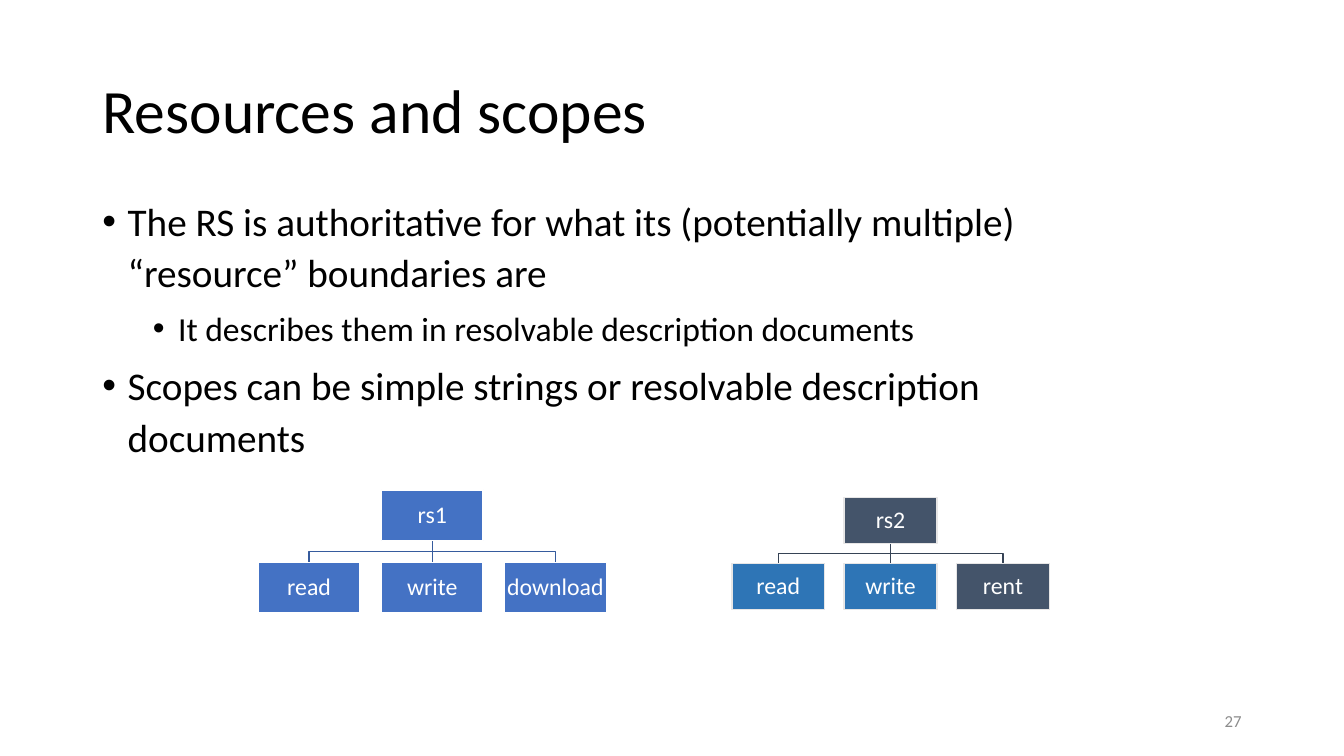
import pptx
import pptx.dml.color
import pptx.enum.shapes
import pptx.enum.text
import pptx.oxml.ns
import pptx.util
from lxml import etree

Pt = pptx.util.Pt
RGBColor = pptx.dml.color.RGBColor
ALIGN = pptx.enum.text.PP_ALIGN
MIDDLE = pptx.enum.text.MSO_ANCHOR.MIDDLE
TOP = pptx.enum.text.MSO_ANCHOR.TOP
SHAPES = pptx.enum.shapes

FONT = "Calibri"
BLACK = RGBColor(0x00, 0x00, 0x00)
WHITE = RGBColor(0xFF, 0xFF, 0xFF)
GRAY = RGBColor(0x8C, 0x8C, 0x8C)
PALE = RGBColor(0xE7, 0xE6, 0xE6)
BLUE = RGBColor(0x44, 0x72, 0xC4)
BLUE_LINE = RGBColor(0x36, 0x5B, 0x9D)
TEAL = RGBColor(0x2E, 0x75, 0xB6)
SLATE = RGBColor(0x44, 0x54, 0x6A)
SLATE_LINE = RGBColor(0x36, 0x43, 0x55)

BULLETS = [
    (0, "The RS is authoritative for what its (potentially multiple) “resource” boundaries are"),
    (1, "It describes them in resolvable description documents"),
    (0, "Scopes can be simple strings or resolvable description documents"),
]


def write_text(para, text, size, color=BLACK, align=ALIGN.LEFT, spacing=1.0, before=0):
    """Write one formatted run into a paragraph."""
    para.alignment = align
    para.line_spacing = spacing
    para.space_before = Pt(before)
    span = para.add_run()
    span.text = text
    span.font.name = FONT
    span.font.size = Pt(size)
    span.font.color.rgb = color


def add_bullet(para, indent):
    """Give a paragraph a hanging round bullet."""
    properties = para._p.get_or_add_pPr()
    properties.set("marL", str(Pt(indent)))
    properties.set("indent", str(Pt(-18)))
    for tag, name, value in (("a:buFont", "typeface", "Arial"), ("a:buChar", "char", "•")):
        etree.SubElement(properties, pptx.oxml.ns.qn(tag)).set(name, value)


def prepare_frame(shape, anchor, margin=None):
    """Set wrapping, anchor and margins of a shape's text and return its frame."""
    frame = shape.text_frame
    frame.word_wrap = True
    frame.auto_size = pptx.enum.text.MSO_AUTO_SIZE.NONE
    frame.vertical_anchor = anchor
    if margin is not None:
        frame.margin_left = frame.margin_right = Pt(margin)
        frame.margin_top = frame.margin_bottom = Pt(margin)
    return frame


def place(shape, box):
    """Move a shape to a box of left, top, width and height in points."""
    shape.left, shape.top, shape.width, shape.height = (Pt(length) for length in box)


def fill_title(page, box):
    """Fill the title placeholder."""
    place(page.shapes.title, box)
    frame = prepare_frame(page.shapes.title, MIDDLE)
    write_text(frame.paragraphs[0], "Resources and scopes", 44, spacing=0.9)


def fill_body(page, box):
    """Fill the body placeholder with the bullet list."""
    body = page.placeholders[1]
    place(body, box)
    frame = prepare_frame(body, TOP)
    for index, (level, text) in enumerate(BULLETS):
        para = frame.add_paragraph() if index else frame.paragraphs[0]
        para.level = level
        add_bullet(para, 18 + 36 * level)
        write_text(para, text, 28 - 4 * level, spacing=1.1, before=6 if index else 0)


def add_page_number(page, box):
    """Add the page number at the right of its box."""
    frame = prepare_frame(page.shapes.add_textbox(*map(Pt, box)), MIDDLE)
    write_text(frame.paragraphs[0], "27", 12, color=GRAY, align=ALIGN.RIGHT)


def add_node(page, box, text, fill, border):
    """Add one labelled box of a tree."""
    node = page.shapes.add_shape(SHAPES.MSO_SHAPE.RECTANGLE, *map(Pt, box))
    node.shadow.inherit = False
    node.fill.solid()
    node.fill.fore_color.rgb = fill
    node.line.color.rgb = border
    node.line.width = Pt(1)
    frame = prepare_frame(node, MIDDLE, margin=0.75)
    write_text(frame.paragraphs[0], text, 17, color=WHITE, align=ALIGN.CENTER, spacing=0.9)


def add_branch(page, start, end, color):
    """Join a parent's bottom to a child's top, with an elbow when they are not aligned."""
    (x1, y1), (x2, y2) = start, end
    if x1 == x2:
        branch = page.shapes.add_connector(
            SHAPES.MSO_CONNECTOR.STRAIGHT, *map(Pt, start + end))
        etree.SubElement(branch._element.spPr, pptx.oxml.ns.qn("a:effectLst"))
    else:
        middle = (y1 + y2) / 2
        builder = page.shapes.build_freeform(Pt(x1), Pt(y1))
        corners = [(x1, middle), (x2, middle), end]
        builder.add_line_segments([(Pt(x), Pt(y)) for x, y in corners], close=False)
        branch = builder.convert_to_shape()
        branch.shadow.inherit = False
        branch.fill.background()
    branch.line.color.rgb = color
    branch.line.width = Pt(1)


def add_tree(page, box, root, leaves, border, line):
    """Draw a root above its three scopes across the given left, top and width."""
    left, top, width = box
    node_width = width / 3.42
    node_height = node_width / 2
    step = 1.21 * node_width
    leaf_top = top + 0.71 * node_width
    lefts = [left + index * step for index in range(3)]
    root_bottom = (lefts[1] + node_width / 2, top + node_height)
    for x in lefts:
        add_branch(page, root_bottom, (x + node_width / 2, leaf_top), line)
    add_node(page, (lefts[1], top, node_width, node_height), *root, border)
    for x, leaf in zip(lefts, leaves):
        add_node(page, (x, leaf_top, node_width, node_height), *leaf, border)


def main():
    """Build the deck."""
    deck = pptx.Presentation()
    deck.slide_width, deck.slide_height = Pt(960), Pt(540)
    page = deck.slides.add_slide(deck.slide_layouts[1])
    fill_title(page, (66, 28.75, 828, 104.4))
    fill_body(page, (66, 133.75, 674, 367))
    add_page_number(page, (678, 500.5, 216, 28.75))
    add_tree(page, (184.5, 350, 248.6), ("rs1", BLUE),
             [("read", BLUE), ("write", BLUE), ("download", BLUE)], WHITE, BLUE_LINE)
    add_tree(page, (522.75, 355.25, 226.8), ("rs2", SLATE),
             [("read", TEAL), ("write", TEAL), ("rent", SLATE)], PALE, SLATE_LINE)
    deck.save("out.pptx")


if __name__ == "__main__":
    main()
